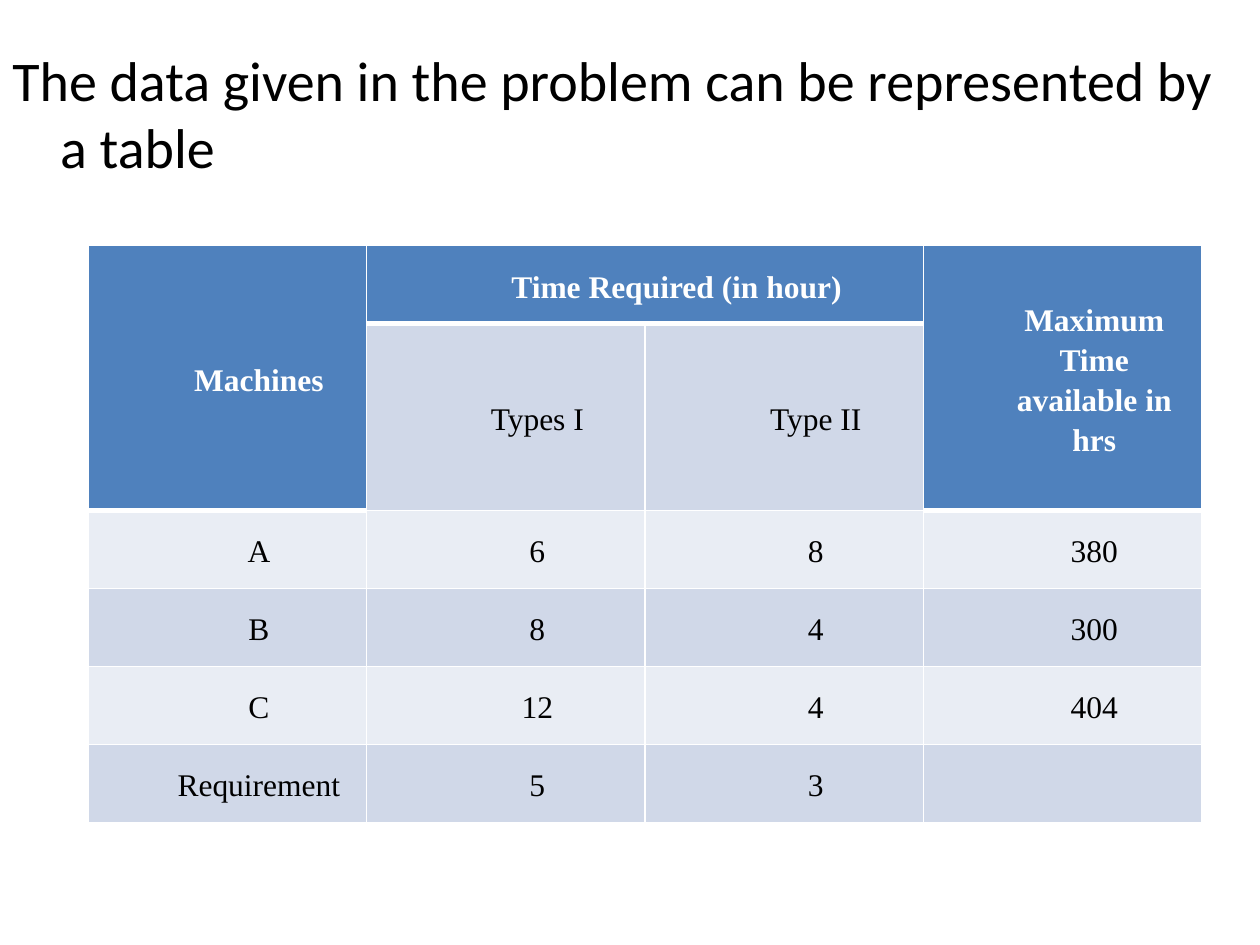
from lxml.etree import SubElement
from pptx import Presentation
from pptx.dml.color import RGBColor
from pptx.enum.text import MSO_ANCHOR as Anchor, PP_ALIGN as Align
from pptx.oxml.ns import qn
from pptx.util import Inches, Pt

COLORS = {"text": "000000", "white": "FFFFFF", "header": "4F81BD",
          "dark_band": "D0D8E8", "light_band": "E9EDF4"}
HEADING = "The data given in the problem can be represented by a table"
ROWS = [
    ["Machines", "Time Required (in hour)", "", "Maximum Time available in hrs"],
    ["", "Types I", "Type II", ""],
    ["A", "6", "8", "380"],
    ["B", "8", "4", "300"],
    ["C", "12", "4", "404"],
    ["Requirement", "5", "3", ""],
]
ROW_HEIGHTS = [0.62, 1.48, 0.62, 0.62, 0.62, 0.62]
COLUMN_WIDTH = 2.21
MERGES = [((0, 0), (1, 0)), ((0, 1), (0, 2)), ((0, 3), (1, 3))]
CELL_FORMAT = {"vertical_anchor": Anchor.MIDDLE,
               "margin_left": Inches(0.07), "margin_right": Inches(0.07),
               "margin_top": 0, "margin_bottom": 0}


def rgb(name):
    return RGBColor.from_string(COLORS[name])


def set_format(target, values):
    for name, value in values.items():
        setattr(target, name, value)


def set_indent(paragraph, left, first=0):
    properties = paragraph._p.get_or_add_pPr()
    properties.set("marL", str(Inches(left)))
    properties.set("indent", str(Inches(first)))


def style_font(font, face, size, color, bold=False):
    set_format(font, {"name": face, "size": Pt(size), "bold": bold})
    font.color.rgb = rgb(color)


def add_heading(slide):
    box = slide.shapes.add_textbox(0, Inches(0.31), Inches(9.84), Inches(6.56))
    box.text_frame.word_wrap = True
    paragraph = box.text_frame.paragraphs[0]
    paragraph.space_before = Pt(6.4)
    set_indent(paragraph, 0.38, -0.38)
    run = paragraph.add_run()
    run.text = HEADING
    style_font(run.font, "Calibri", 32, "text")


def is_header(row, column):
    return row == 0 or (row == 1 and column in (0, 3))


def set_borders(cell, widths):
    """Draw white borders; they must come before the fill in the cell's XML."""
    properties = cell._tc.get_or_add_tcPr()
    for side, width in widths.items():
        line = SubElement(properties, qn(f"a:ln{side}"), w=str(Pt(width)))
        fill = SubElement(line, qn("a:solidFill"))
        SubElement(fill, qn("a:srgbClr"), val=COLORS["white"])


def fill_cell(cell, row, column, text):
    header = is_header(row, column)
    below_header = not header and is_header(row - 1, column)
    set_borders(cell, {"L": 1, "R": 1, "T": 3 if below_header else 1,
                       "B": 3 if header else 1})
    band = "dark_band" if row % 2 else "light_band"
    cell.fill.solid()
    cell.fill.fore_color.rgb = rgb("header" if header else band)
    set_format(cell, CELL_FORMAT)
    if text:
        paragraph = cell.text_frame.paragraphs[0]
        set_format(paragraph, {"alignment": Align.CENTER, "line_spacing": 1.15})
        set_indent(paragraph, 0.5)
        run = paragraph.add_run()
        run.text = text
        style_font(run.font, "Times New Roman", 18,
                   "white" if header else "text", header)


def add_machine_table(slide):
    columns = len(ROWS[0])
    table = slide.shapes.add_table(
        len(ROWS), columns, Inches(0.7), Inches(1.95),
        Inches(COLUMN_WIDTH * columns), Inches(sum(ROW_HEIGHTS))).table
    for column in table.columns:
        column.width = Inches(COLUMN_WIDTH)
    for table_row, height in zip(table.rows, ROW_HEIGHTS):
        table_row.height = Inches(height)
    for first, last in MERGES:
        table.cell(*first).merge(table.cell(*last))
    for row, texts in enumerate(ROWS):
        for column, text in enumerate(texts):
            fill_cell(table.cell(row, column), row, column, text)


def main():
    deck = Presentation()
    set_format(deck, {"slide_width": Inches(10), "slide_height": Inches(7.5)})
    slide = deck.slides.add_slide(deck.slide_layouts[6])
    add_heading(slide)
    add_machine_table(slide)
    deck.save("out.pptx")


if __name__ == "__main__":
    main()
